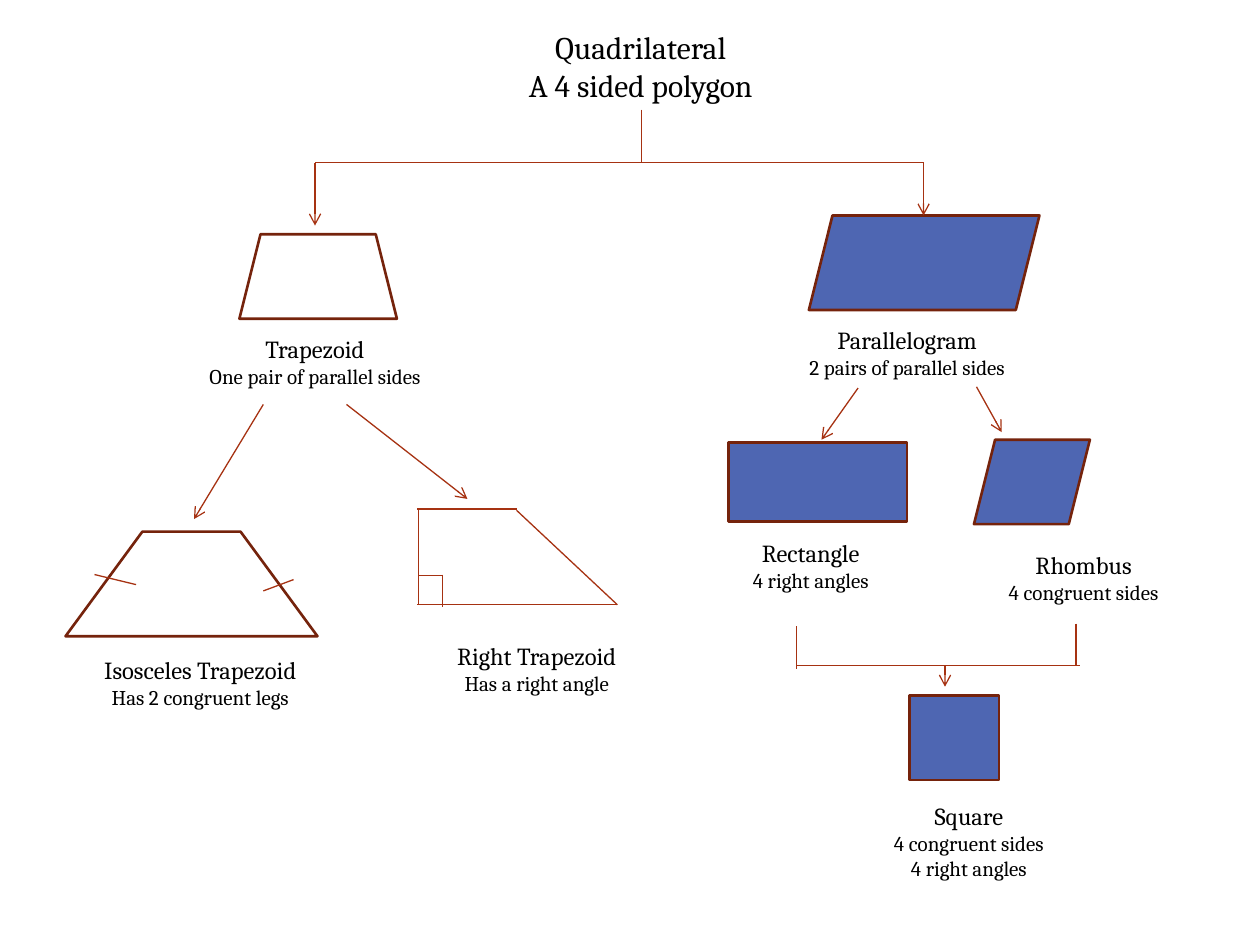
from itertools import pairwise

from lxml.etree import SubElement
from pptx import Presentation
from pptx.dml.color import RGBColor
from pptx.enum.shapes import MSO_CONNECTOR, MSO_SHAPE
from pptx.enum.text import MSO_ANCHOR, MSO_AUTO_SIZE, PP_ALIGN
from pptx.oxml.ns import qn
from pptx.util import Inches, Pt

FONT = "Cambria"
COLORS = {"text": "000000", "line": "A63212", "outline": "75230C", "fill": "4E66B2"}

TITLE = ["Quadrilateral", "A 4 sided polygon"]
TITLE_PLACE = (2.67, 0.17, 4.83, 0.71)

LABELS = [
    (["Trapezoid", "One pair of parallel sides"], (1.26, 2.6, 2.48, 0.54)),
    (["Isosceles Trapezoid", "Has 2 congruent legs"], (0.39, 5.15, 2.4, 0.54)),
    (["Right Trapezoid", "Has a right angle"], (3.2, 5.04, 2.12, 0.54)),
    (["Parallelogram", "2 pairs of parallel sides"], (5.75, 2.53, 2.9, 0.54)),
    (["Rectangle", "4 right angles"], (5.67, 4.22, 1.53, 0.54)),
    (["Rhombus", "4 congruent sides"], (7.69, 4.32, 1.82, 0.74)),
    (["Square", "4 congruent sides", "4 right angles"], (6.87, 6.31, 1.64, 0.74)),
]

FIGURES = [
    (MSO_SHAPE.TRAPEZOID, (1.9, 1.86, 1.25, 0.67), 0.25, None),
    (MSO_SHAPE.PARALLELOGRAM, (6.42, 1.71, 1.83, 0.75), 0.25, "fill"),
    (MSO_SHAPE.TRAPEZOID, (0.52, 4.22, 2, 0.83), 0.735, None),
    (MSO_SHAPE.RECTANGLE, (5.78, 3.51, 1.42, 0.63), None, "fill"),
    (MSO_SHAPE.PARALLELOGRAM, (7.73, 3.49, 0.92, 0.67), 0.25, "fill"),
    (MSO_SHAPE.RECTANGLE, (7.22, 5.52, 0.71, 0.67), None, "fill"),
]

ARROW_ROUTES = [
    [(5.09, 0.87), (5.09, 1.29), (2.5, 1.29), (2.5, 1.79)],
    [(5.09, 1.29), (7.33, 1.29), (7.33, 1.71)],
    [(2.09, 3.21), (1.54, 4.12)],
    [(2.75, 3.21), (3.71, 3.96)],
    [(6.81, 3.08), (6.52, 3.49)],
    [(7.75, 3.07), (7.95, 3.43)],
    [(7.5, 5.28), (7.5, 5.45)],
]
SQUARE_BRACKET = [
    [(6.32, 4.97), (6.32, 5.31)],
    [(6.32, 5.28), (8.57, 5.28)],
    [(8.54, 4.95), (8.54, 5.28)],
]
RIGHT_TRAPEZOID = [
    [(3.32, 4.05), (3.32, 4.8)],
    [(3.31, 4.8), (4.9, 4.8)],
    [(3.31, 4.04), (4.1, 4.04)],
    [(4.1, 4.05), (4.9, 4.8)],
]
RIGHT_ANGLE_MARK = [[(3.32, 4.57), (3.51, 4.57)], [(3.51, 4.56), (3.51, 4.82)]]
CONGRUENT_MARKS = [[(0.75, 4.56), (1.08, 4.64)], [(2.09, 4.69), (2.33, 4.6)]]


def color(name):
    return RGBColor.from_string(COLORS[name])


def inches(values):
    return [Inches(value) for value in values]


def write_lines(box, lines, first_size, other_size):
    frame = box.text_frame
    frame.word_wrap = True
    frame.auto_size = MSO_AUTO_SIZE.NONE
    frame.vertical_anchor = MSO_ANCHOR.TOP
    for index, line in enumerate(lines):
        para = frame.add_paragraph() if index else frame.paragraphs[0]
        para.alignment = PP_ALIGN.CENTER
        span = para.add_run()
        span.text = line
        span.font.name = FONT
        span.font.size = Pt(other_size if index else first_size)
        span.font.color.rgb = color("text")


def add_figure(page, kind, place, slant, fill):
    figure = page.shapes.add_shape(kind, *inches(place))
    figure.shadow.inherit = False
    if slant is not None:
        figure.adjustments[0] = slant
    if fill:
        figure.fill.solid()
        figure.fill.fore_color.rgb = color(fill)
    else:
        figure.fill.background()
    figure.line.color.rgb = color("outline")
    figure.line.width = Pt(1.5)


def add_line(page, start, end, arrow=False):
    line = page.shapes.add_connector(MSO_CONNECTOR.STRAIGHT, *inches(start + end))
    line.line.color.rgb = color("line")
    line.line.width = Pt(0.75)
    if arrow:
        SubElement(line.line._get_or_add_ln(), qn("a:tailEnd"), type="arrow")
    SubElement(line._element.spPr, qn("a:effectLst"))


def main():
    """Build the family tree of quadrilaterals."""
    deck = Presentation()
    deck.slide_width, deck.slide_height = inches((10, 7.5))
    page = deck.slides.add_slide(deck.slide_layouts[5])

    title = page.shapes.title
    title.left, title.top, title.width, title.height = inches(TITLE_PLACE)
    write_lines(title, TITLE, 18, 18)

    for figure in FIGURES:
        add_figure(page, *figure)
    for route in ARROW_ROUTES:
        for start, end in pairwise(route):
            add_line(page, start, end, arrow=end == route[-1])
    for start, end in SQUARE_BRACKET + RIGHT_TRAPEZOID + RIGHT_ANGLE_MARK + CONGRUENT_MARKS:
        add_line(page, start, end)
    for lines, place in LABELS:
        write_lines(page.shapes.add_textbox(*inches(place)), lines, 14, 12)

    deck.save("out.pptx")


if __name__ == "__main__":
    main()
